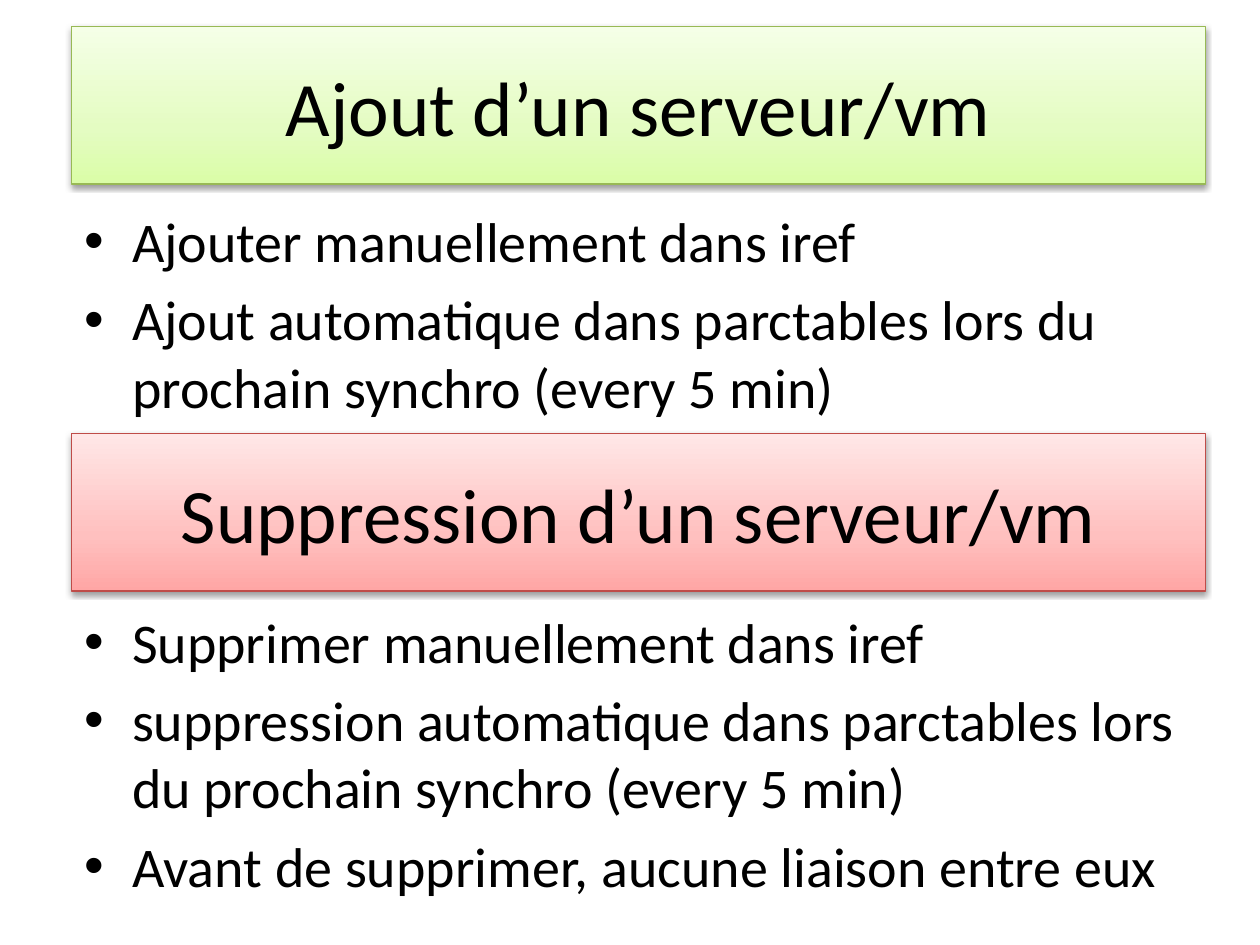
from copy import deepcopy

from lxml.etree import SubElement
from pptx import Presentation
from pptx.dml.color import RGBColor
from pptx.enum.shapes import MSO_SHAPE
from pptx.enum.text import MSO_ANCHOR as Anchor, PP_ALIGN as Align
from pptx.oxml.ns import qn
from pptx.util import Inches, Pt

FONT = "Calibri"
COLORS = {"text": "000000", "shadow": "000000",
          "add_line": "98B955", "remove_line": "BF4C48"}
GRADIENTS = {"add": ("DAFDA7", "E4FCC2", "F5FFE7"),
             "remove": ("FFA6A5", "FFC0BF", "FFE7E7")}
STOPS = (0, 0.35, 1)

# Content: each section has a banner and a bullet list
SECTIONS = [
    {"kind": "add", "title": "Ajout d’un serveur/vm",
     "banner_top": 0.21, "list_top": 1.59, "list_height": 1.92,
     "bullets": ["Ajouter manuellement dans iref",
                 "Ajout automatique dans parctables lors du prochain synchro (every 5 min)"]},
    {"kind": "remove", "title": "Suppression d’un serveur/vm",
     "banner_top": 3.44, "list_top": 4.77, "list_height": 2.6,
     "bullets": ["Supprimer manuellement dans iref",
                 "suppression automatique dans parctables lors du prochain synchro (every 5 min)",
                 "Avant de supprimer, aucune liaison entre eux"]},
]
LEFT, WIDTH, BANNER_HEIGHT = 0.57, 9, 1.25
INDENT = 0.38


def add_bullet(para):
    props = para._p.get_or_add_pPr()
    props.set("marL", str(Inches(INDENT)))
    props.set("indent", str(-Inches(INDENT)))
    before = SubElement(props, qn("a:spcBef"))
    SubElement(before, qn("a:spcPct"), val="20000")
    SubElement(props, qn("a:buFont"), typeface="Arial")
    SubElement(props, qn("a:buChar"), char="•")


def write_text(box, lines, size, align=Align.LEFT, anchor=Anchor.TOP, bullets=False):
    frame = box.text_frame
    frame.word_wrap = True
    frame.vertical_anchor = anchor
    for index, line in enumerate(lines):
        para = frame.add_paragraph() if index else frame.paragraphs[0]
        para.alignment = align
        if bullets:
            add_bullet(para)
        span = para.add_run()
        span.text = line
        span.font.name = FONT
        span.font.size = Pt(size)
        span.font.color.rgb = RGBColor.from_string(COLORS["text"])


def fill_gradient(shape, colors):
    shape.fill.gradient()
    shape.fill.gradient_angle = 90
    stop_list = shape._element.spPr.find(qn("a:gradFill")).find(qn("a:gsLst"))
    stop_list.append(deepcopy(stop_list[0]))
    for stop, position, color in zip(shape.fill.gradient_stops, STOPS, colors):
        stop.position = position
        stop.color.rgb = RGBColor.from_string(color)


def add_shadow(shape):
    shape.shadow.inherit = False
    effects = shape._element.spPr.find(qn("a:effectLst"))
    outer = SubElement(effects, qn("a:outerShdw"), blurRad=str(Pt(3.1)),
                       dist=str(Pt(1.6)), dir="5400000", rotWithShape="0")
    color = SubElement(outer, qn("a:srgbClr"), val=COLORS["shadow"])
    SubElement(color, qn("a:alpha"), val="38000")


def add_section(page, section):
    # Banner
    kind = section["kind"]
    banner = page.shapes.add_shape(
        MSO_SHAPE.RECTANGLE, Inches(LEFT), Inches(section["banner_top"]),
        Inches(WIDTH), Inches(BANNER_HEIGHT))
    fill_gradient(banner, GRADIENTS[kind])
    banner.line.color.rgb = RGBColor.from_string(COLORS[kind + "_line"])
    banner.line.width = Pt(0.75)
    add_shadow(banner)
    write_text(banner, [section["title"]], 44, align=Align.CENTER, anchor=Anchor.MIDDLE)

    # Bullet list
    box = page.shapes.add_textbox(
        Inches(LEFT), Inches(section["list_top"]),
        Inches(WIDTH), Inches(section["list_height"]))
    write_text(box, section["bullets"], 32, bullets=True)


def main():
    deck = Presentation()
    deck.slide_width, deck.slide_height = Inches(10), Inches(7.5)
    page = deck.slides.add_slide(deck.slide_layouts[6])
    for section in SECTIONS:
        add_section(page, section)
    deck.save("out.pptx")


if __name__ == "__main__":
    main()
